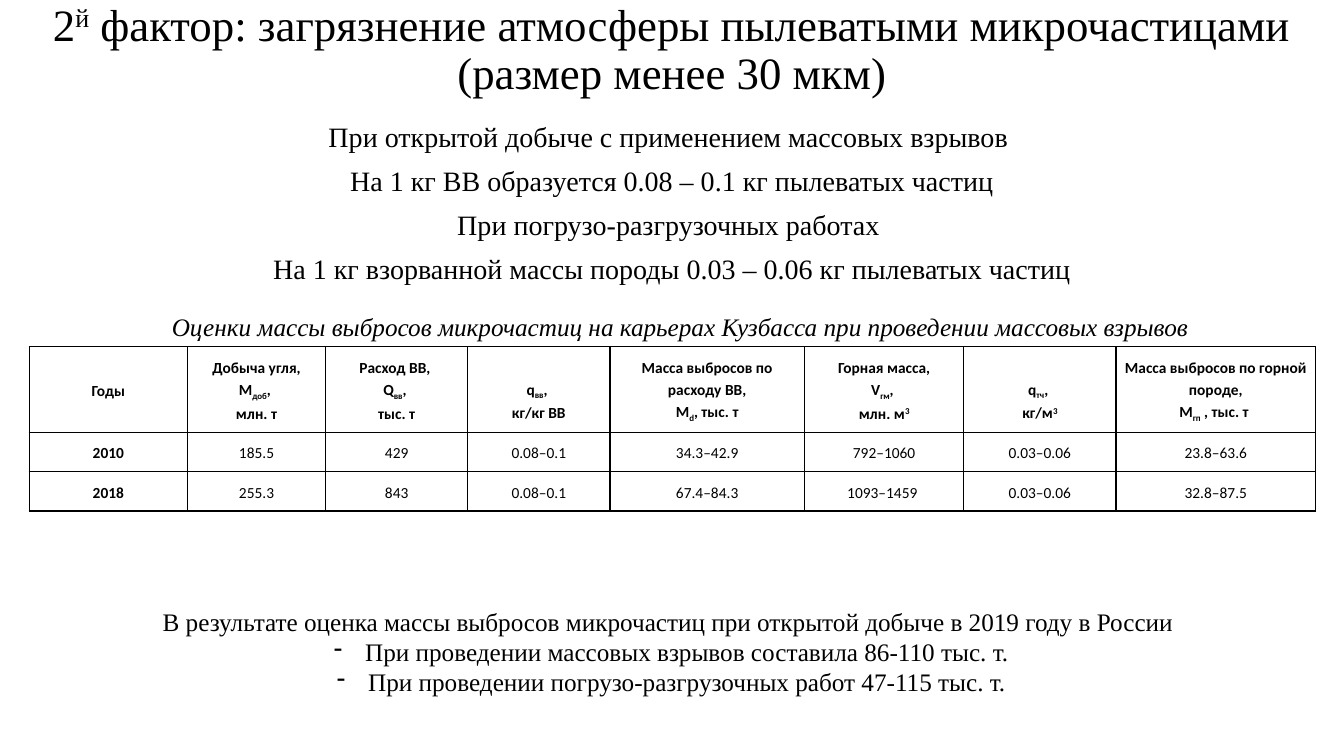
from lxml import etree
from pptx import Presentation
from pptx import util as u
from pptx.dml.color import RGBColor
from pptx.enum import text
from pptx.oxml import ns

theme = {
    "ink": RGBColor(0, 0, 0), "serif": "Times New Roman", "sans": "Calibri",
    "title": 32, "body": 20, "note": 18, "cell": 11, "rule": 1,
}

deck = Presentation()
deck.slide_width, deck.slide_height = u.Inches(13.33), u.Inches(7.5)
wide, high = deck.slide_width, deck.slide_height
slide = deck.slides.add_slide(deck.slide_layouts[6])


def fill_text(frame, lines, size, face="serif", bold=False, italic=False, pitch=1.0, before=0):
    """Centred lines; ~+x~ raises x and ~-x~ lowers it."""
    frame.word_wrap = True
    for n, line in enumerate(lines):
        para = frame.paragraphs[0] if n == 0 else frame.add_paragraph()
        para.alignment = text.PP_ALIGN.CENTER
        para.line_spacing, para.space_before = pitch, u.Pt(before)
        for i, bit in enumerate(line.split("~")):
            if not bit:
                continue
            run = para.add_run()
            run.text = bit[1:] if i % 2 else bit
            font = run.font
            font.name, font.size = theme[face], u.Pt(theme[size])
            font.bold, font.italic = bold, italic
            font.color.rgb = theme["ink"]
            if i % 2:
                font._element.set("baseline", "30000" if bit[0] == "+" else "-25000")


def add_box(left, top, width, height):
    """Text box placed by shares of the slide."""
    box = slide.shapes.add_textbox(int(left * wide), int(top * high),
                                   int(width * wide), int(height * high))
    return box.text_frame


# Title
head = add_box(0, 0, 1, 0.135)
head.vertical_anchor = text.MSO_ANCHOR.MIDDLE
fill_text(head, ["2~+й~ фактор: загрязнение атмосферы пылеватыми микрочастицами "
                 "(размер менее 30 мкм)"], "title", pitch=0.9)

# Dust rates
fill_text(add_box(0, 0.156, 1, 0.24), [
    "При открытой добыче с применением массовых взрывов ",
    "На 1 кг ВВ образуется 0.08 – 0.1 кг пылеватых частиц",
    "При погрузо-разгрузочных работах ",
    "На 1 кг взорванной массы породы 0.03 – 0.06 кг пылеватых частиц",
], "body", pitch=0.9, before=10)

# Emission table
cols = [1.57, 1.37, 1.41, 1.41, 1.93, 1.58, 1.51, 1.98]
rows = [0.85, 0.39, 0.39]
data = [
    ["Годы", "Добыча угля,\nM~-доб~, \nмлн. т", "Расход ВВ, \nQ~-вв~, \nтыс. т",
     "q~-вв~, \nкг/кг ВВ", "Масса выбросов по расходу ВВ,\nM~-d~, тыс. т",
     "Горная масса,\nV~-гм~, \nмлн. м~+3~", "q~-тч~, \nкг/м~+3~",
     "Масса выбросов по горной породе,\nM~-гп~ , тыс. т "],
    ["2010", "185.5", "429", "0.08–0.1", "34.3–42.9", "792–1060", "0.03–0.06", "23.8–63.6"],
    ["2018", "255.3", "843", "0.08–0.1", "67.4–84.3", "1093–1459 ", "0.03–0.06", "32.8–87.5"],
]
grid = slide.shapes.add_table(len(rows), len(cols), u.Inches(0.29), u.Inches(3.44),
                              u.Inches(sum(cols)), u.Inches(sum(rows))).table
grid.first_row = grid.horz_banding = False
for col, size in zip(grid.columns, cols):
    col.width = u.Inches(size)
for row, size in zip(grid.rows, rows):
    row.height = u.Inches(size)

for r, line in enumerate(data):
    for c, words in enumerate(line):
        cell = grid.cell(r, c)
        cell.margin_left = cell.margin_right = u.Inches(0.07)
        # Symbols of specific rates sit one line lower
        cell.margin_top = u.Inches(0.21 if words.startswith("q") else 0)
        cell.margin_bottom = 0
        cell.vertical_anchor = text.MSO_ANCHOR.MIDDLE
        fill_text(cell.text_frame, words.split("\n"), "cell", "sans",
                  bold=r == 0 or c == 0, pitch=1.15)
        cell.fill.background()
        # Cell borders come before the fill
        props = cell._tc.get_or_add_tcPr()
        for n, side in enumerate("LRTB"):
            edge = etree.Element(ns.qn("a:ln" + side), w=str(u.Pt(theme["rule"])))
            paint = etree.SubElement(edge, ns.qn("a:solidFill"))
            etree.SubElement(paint, ns.qn("a:srgbClr"), val=str(theme["ink"]))
            props.insert(n, edge)

# Table caption
fill_text(add_box(0.053, 0.405, 0.911, 0.054), [
    "Оценки массы выбросов микрочастиц на карьерах Кузбасса при проведении массовых взрывов ",
], "note", italic=True)

# Result with dashed points
result = add_box(0.044, 0.795, 0.911, 0.135)
fill_text(result, [
    "В результате оценка массы выбросов микрочастиц при открытой добыче в 2019 году в России ",
    "При проведении массовых взрывов составила 86-110 тыс. т.",
    "При проведении погрузо-разгрузочных работ 47-115 тыс. т.",
], "note")
dent = u.Inches(0.31)
for para in result.paragraphs[1:]:
    props = para._p.get_or_add_pPr()
    props.set("marL", str(dent))
    props.set("indent", str(-dent))
    etree.SubElement(props, ns.qn("a:buFontTx"))
    etree.SubElement(props, ns.qn("a:buChar"), char="-")

deck.save("out.pptx")
